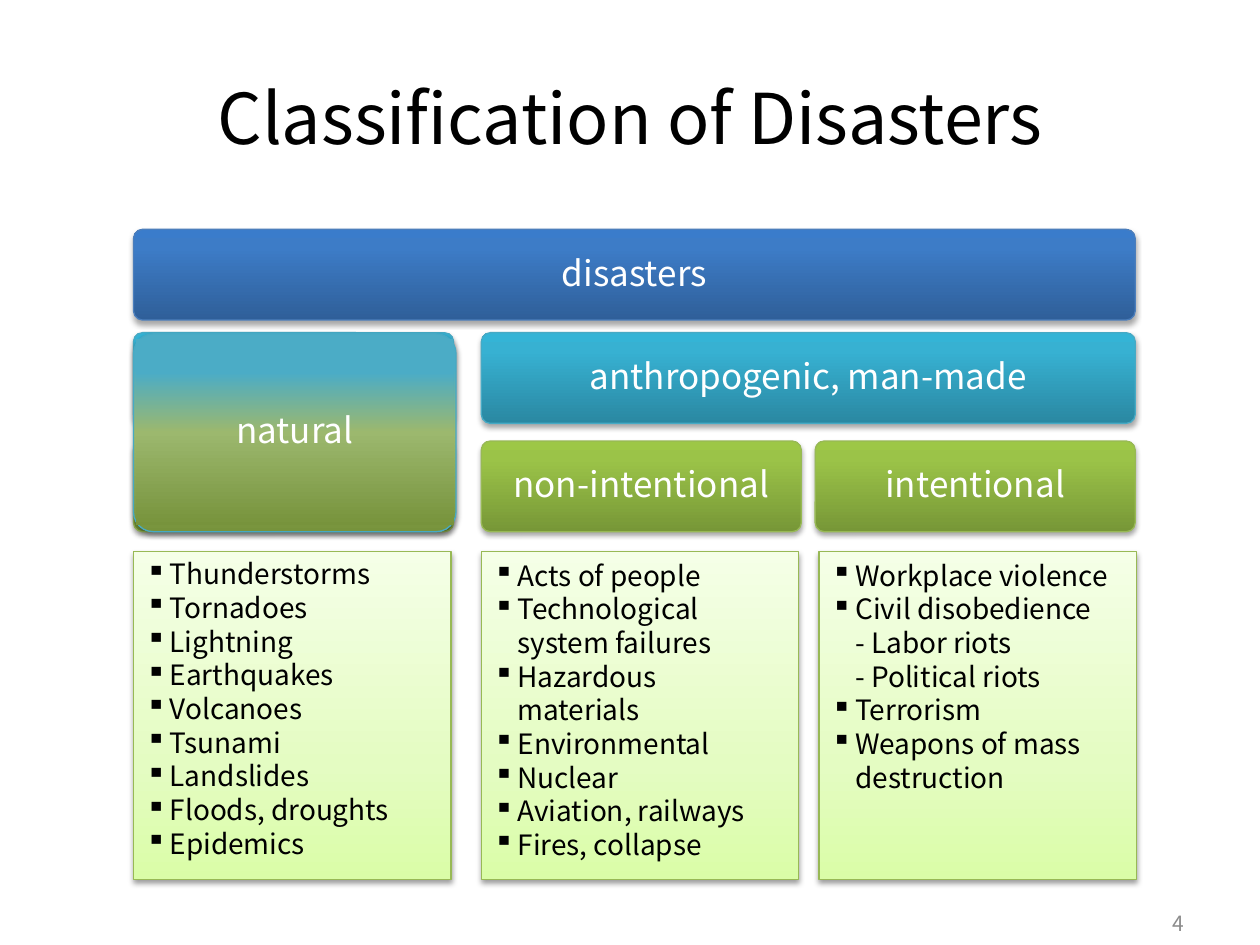
from lxml import etree
from pptx import Presentation
from pptx.dml.color import RGBColor
from pptx.enum.shapes import MSO_SHAPE as Shape
from pptx.enum.text import MSO_ANCHOR as Anchor, PP_ALIGN as Align
from pptx.oxml import parse_xml
from pptx.oxml.ns import nsdecls, qn
from pptx.util import Inches, Pt

FONT = "Noto Sans CJK KR"
COLORS = {
    "text": "000000", "label": "FFFFFF", "number": "8C8C8C", "shadow": "000000",
    "blue_line": "4B7EBC", "teal_line": "46AAC5", "green_line": "98B955",
}
GRADIENTS = {
    "blue": (270, [(0, "2F5F99"), (80, "3D7CC7"), (100, "3A7CCB")]),
    "teal": (270, [(0, "2A88A2"), (80, "37B1D2"), (100, "34B4D6")]),
    "green": (270, [(0, "779737"), (80, "9BC348"), (100, "9DC746")]),
    "panel": (270, [(0, "DAFDA7"), (35, "E4FCC2"), (100, "F5FFE7")]),
    "natural": (90, [(18, "4BACC6"), (50, "9CB86E"), (100, "77933C")]),
}
LEFT, MIDDLE, RIGHT = 1.06, 3.82, 6.47
CELL_WIDTH, BAR_HEIGHT, INSET = 2.54, 0.72, 0.02
ROWS = [1.82, 2.64, 3.5]
BARS = [
    (LEFT, ROWS[0], 7.95, "blue", "disasters"),
    (LEFT, ROWS[1], CELL_WIDTH, "teal", None),
    (LEFT, ROWS[2], CELL_WIDTH, "green", None),
    (MIDDLE, ROWS[1], 5.19, "teal", "anthropogenic, man-made"),
    (MIDDLE, ROWS[2], CELL_WIDTH, "green", "non-intentional"),
    (RIGHT, ROWS[2], CELL_WIDTH, "green", "intentional"),
]
LISTS = [
    (LEFT, 4.37, 3.16, ["Thunderstorms", "Tornadoes", "Lightning", "Earthquakes", "Volcanoes",
                        "Tsunami", "Landslides", "Floods, droughts", "Epidemics"]),
    (MIDDLE, 4.38, 2.56, ["Acts of people", "Technological system failures",
                          "Hazardous materials", "Environmental", "Nuclear",
                          "Aviation, railways", "Fires, collapse"]),
    (6.5, 4.38, 1.99, ["Workplace violence", "Civil disobedience", "- Labor riots",
                       "- Political riots", "Terrorism", "Weapons of mass destruction"]),
]


def place(box, left, top, width, height):
    box.left, box.top = Inches(left), Inches(top)
    box.width, box.height = Inches(width), Inches(height)


def format_runs(para, size, color):
    for span in para.runs:
        span.font.name = FONT
        span.font.size = Pt(size)
        span.font.color.rgb = RGBColor.from_string(COLORS[color])


def set_text(box, text, size, color, align):
    frame = box.text_frame
    frame.word_wrap = True
    frame.vertical_anchor = Anchor.MIDDLE
    frame.text = text
    para = frame.paragraphs[0]
    para.alignment = align
    format_runs(para, size, color)
    return frame


def set_gradient(box, name):
    angle, stops = GRADIENTS[name]
    marks = "".join(
        f'<a:gs pos="{position * 1000}"><a:srgbClr val="{color}"/></a:gs>'
        for position, color in stops
    )
    gradient = parse_xml(
        f'<a:gradFill {nsdecls("a")} rotWithShape="1"><a:gsLst>{marks}</a:gsLst>'
        f'<a:lin ang="{angle * 60000}" scaled="0"/></a:gradFill>'
    )
    box.fill.background()
    properties = box._element.spPr
    properties.replace(properties.find(qn("a:noFill")), gradient)


def set_shadow(box, opacity, distance):
    box.shadow.inherit = False
    effects = box._element.spPr.find(qn("a:effectLst"))
    effects.append(parse_xml(
        f'<a:outerShdw {nsdecls("a")} blurRad="{Pt(3.1)}" dist="{Pt(distance)}" '
        f'dir="5400000" rotWithShape="0"><a:srgbClr val="{COLORS["shadow"]}">'
        f'<a:alpha val="{opacity * 1000}"/></a:srgbClr></a:outerShdw>'
    ))


def add_block(page, kind, bounds, gradient, line, opacity=35, distance=1.8):
    block = page.shapes.add_shape(kind, *map(Inches, bounds))
    if kind == Shape.ROUNDED_RECTANGLE:
        block.adjustments[0] = 0.1
    set_gradient(block, gradient)
    block.line.color.rgb = RGBColor.from_string(COLORS[line])
    block.line.width = Pt(0.75)
    set_shadow(block, opacity, distance)


def set_label(box, text):
    frame = set_text(box, text, 20, "label", Align.CENTER)
    frame.margin_left = frame.margin_right = Inches(0.08)
    frame.margin_top = frame.margin_bottom = Inches(0.08)
    frame.paragraphs[0].line_spacing = 0.9


def add_bar(page, left, top, width, color, text):
    bounds = (left, top, width, BAR_HEIGHT)
    add_block(page, Shape.ROUNDED_RECTANGLE, bounds, color, f"{color}_line")
    if text:
        inner = (left + INSET, top + INSET, width - 2 * INSET, BAR_HEIGHT - 2 * INSET)
        set_label(page.shapes.add_textbox(*map(Inches, inner)), text)


def add_natural(page):
    add_block(page, Shape.ROUNDED_RECTANGLE, (LEFT, 2.65, 2.56, 1.57), "natural", "teal_line")
    label = page.shapes.add_shape(Shape.RECTANGLE, *map(Inches, (1.08, 2.69, 2.52, 1.48)))
    set_gradient(label, "natural")
    label.line.fill.background()
    label.shadow.inherit = False
    set_label(label, "natural")


def set_bullet(para, margin, hanging, mark=None):
    properties = para._p.get_or_add_pPr()
    properties.set("marL", str(Inches(margin)))
    properties.set("indent", str(-Inches(hanging)))
    if mark:
        etree.SubElement(properties, qn("a:buChar")).set("char", mark)
    else:
        etree.SubElement(properties, qn("a:buNone"))


def add_list(page, left, top, height, items):
    box = page.shapes.add_textbox(*map(Inches, (left, top, 2.44, height)))
    frame = box.text_frame
    frame.word_wrap = True
    frame.text = "\n".join(items)
    for para in frame.paragraphs:
        para.line_spacing = Pt(19.25)
        if para.text.startswith("-"):
            para.level = 1
            set_bullet(para, 0.39, 0.2)
        else:
            set_bullet(para, 0.19, 0.19, "▪")
        format_runs(para, 16, "text")


def main():
    deck = Presentation()
    deck.slide_width, deck.slide_height = Inches(10), Inches(7.5)
    page = deck.slides.add_slide(deck.slide_layouts[5])
    for left in (6.5, MIDDLE, LEFT):
        add_block(page, Shape.RECTANGLE, (left, 4.38, 2.52, 2.6), "panel", "green_line", 38, 1.6)
    title = page.shapes.title
    place(title, 0.5, 0.3, 9, 1.25)
    set_text(title, "Classification of Disasters", 40, "text", Align.CENTER)
    for bar in BARS:
        add_bar(page, *bar)
    for column in LISTS:
        add_list(page, *column)
    add_natural(page)
    number = page.shapes.add_textbox(*map(Inches, (7.17, 7.13, 2.33, 0.4)))
    set_text(number, "4", 12, "number", Align.RIGHT)
    deck.save("out.pptx")


if __name__ == "__main__":
    main()
